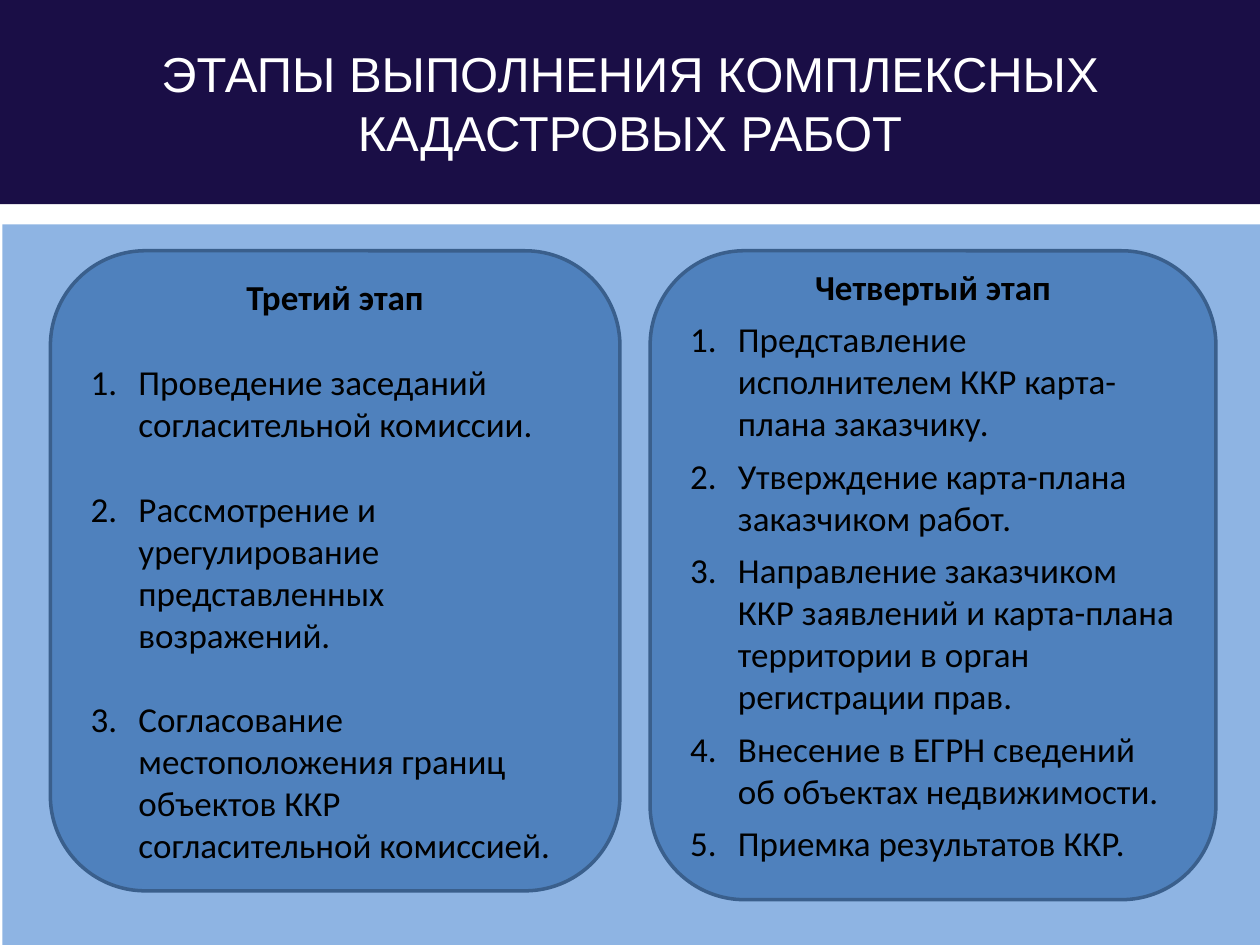
from lxml import etree
from pptx import Presentation
from pptx import util as u
from pptx.dml.color import RGBColor
from pptx.enum import shapes, text
from pptx.oxml.ns import qn

COLORS = {
    "title": "1A0E46",
    "backdrop": "8EB4E3",
    "card": "4F81BD",
    "outline": "3A5F8C",
    "light": "FFFFFF",
    "dark": "000000",
}
LINE_HEIGHT = 24.4  # points, one line of 20 pt Calibri

STAGE_THREE = [
    "Проведение заседаний согласительной комиссии.",
    "Рассмотрение и урегулирование представленных возражений.",
    "Согласование местоположения границ объектов ККР согласительной комиссией.",
]
STAGE_FOUR = [
    "Представление исполнителем ККР карта-плана заказчику.",
    "Утверждение карта-плана заказчиком работ.",
    "Направление заказчиком ККР заявлений и карта-плана территории в орган регистрации прав.",
    "Внесение в ЕГРН сведений об объектах недвижимости.",
    "Приемка результатов ККР.",
]


def color(name):
    return RGBColor.from_string(COLORS[name])


def add_box(slide, kind, box, fill, outline=None):
    shape = slide.shapes.add_shape(kind, *(u.Inches(length) for length in box))
    shape.shadow.inherit = False
    shape.fill.solid()
    shape.fill.fore_color.rgb = color(fill)
    if outline:
        shape.line.color.rgb = color(outline)
        shape.line.width = u.Pt(2)
    else:
        shape.line.fill.background()
    shape.text_frame.word_wrap = True
    shape.text_frame.vertical_anchor = text.MSO_ANCHOR.MIDDLE
    return shape


def add_run(paragraph, words, size, font, color_name, bold=False):
    run = paragraph.add_run()
    run.text = words
    run.font.size = u.Pt(size)
    run.font.name = font
    run.font.bold = bold
    run.font.color.rgb = color(color_name)


def number_paragraph(paragraph):
    """Give the paragraph automatic numbering with a hanging indent."""
    properties = paragraph._p.get_or_add_pPr()
    indent = u.Inches(0.38)
    properties.set("marL", str(indent))
    properties.set("indent", str(-indent))
    numbering = etree.SubElement(properties, qn("a:buAutoNum"))
    numbering.set("type", "arabicPeriod")


def add_title(slide, box, words):
    shape = add_box(slide, shapes.MSO_SHAPE.RECTANGLE, box, "title")
    paragraph = shape.text_frame.paragraphs[0]
    paragraph.alignment = text.PP_ALIGN.CENTER
    add_run(paragraph, words, 28, "Arial", "light")


def add_stage(slide, box, heading, steps, gap, bottom_margin=0.05):
    """Place a rounded card with a heading and numbered steps, gap points apart."""
    shape = add_box(slide, shapes.MSO_SHAPE.ROUNDED_RECTANGLE, box, "card", "outline")
    frame = shape.text_frame
    frame.margin_bottom = u.Inches(bottom_margin)
    paragraph = frame.paragraphs[0]
    paragraph.alignment = text.PP_ALIGN.CENTER
    add_run(paragraph, heading, 20, "Calibri", "dark", bold=True)
    for step in steps:
        paragraph.space_after = u.Pt(gap)
        paragraph = frame.add_paragraph()
        paragraph.alignment = text.PP_ALIGN.LEFT
        number_paragraph(paragraph)
        add_run(paragraph, step, 20, "Calibri", "dark")


def add_stages(slide, box):
    left, top, _, _ = box
    add_box(slide, shapes.MSO_SHAPE.RECTANGLE, box, "backdrop")
    card_top = top + 0.21
    add_stage(slide, (left + 0.38, card_top, 4.52, 5.08),
              "Третий этап", STAGE_THREE, LINE_HEIGHT)
    add_stage(slide, (left + 5.14, card_top, 4.49, 5.15),
              "Четвертый этап", STAGE_FOUR, 6, bottom_margin=0.22)


def main():
    presentation = Presentation()
    presentation.slide_width = u.Inches(10)
    presentation.slide_height = u.Inches(7.5)
    slide = presentation.slides.add_slide(presentation.slide_layouts[6])
    add_title(slide, (0, 0, 10, 1.62), "ЭТАПЫ ВЫПОЛНЕНИЯ КОМПЛЕКСНЫХ КАДАСТРОВЫХ РАБОТ")
    add_stages(slide, (0.02, 1.78, 10, 5.72))
    presentation.save("out.pptx")


if __name__ == "__main__":
    main()
